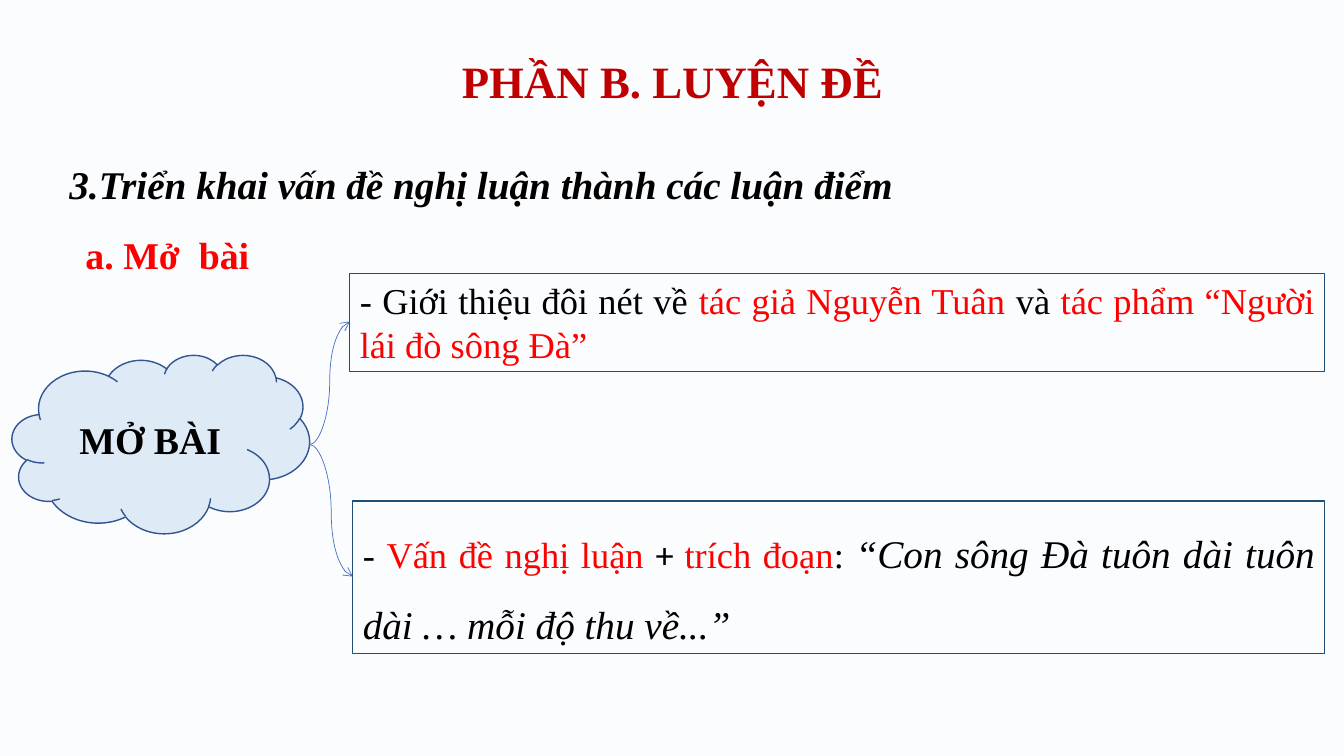
from dataclasses import dataclass

from lxml import etree
from pptx import Presentation
from pptx.dml.color import RGBColor
from pptx.enum.shapes import MSO_CONNECTOR, MSO_SHAPE
from pptx.enum.text import MSO_ANCHOR, MSO_AUTO_SIZE, PP_ALIGN
from pptx.oxml.ns import qn
from pptx.util import Inches, Pt

CURVE = MSO_CONNECTOR.CURVE
RECTANGLE, CLOUD = MSO_SHAPE.RECTANGLE, MSO_SHAPE.CLOUD
TOP, MIDDLE = MSO_ANCHOR.TOP, MSO_ANCHOR.MIDDLE
GROW, FIXED = MSO_AUTO_SIZE.SHAPE_TO_FIT_TEXT, MSO_AUTO_SIZE.NONE
CENTER, JUSTIFY = PP_ALIGN.CENTER, PP_ALIGN.JUSTIFY

PAPER = RGBColor(0xFB, 0xFC, 0xFE)
BLACK = RGBColor(0x00, 0x00, 0x00)
RED = RGBColor(0xFF, 0x00, 0x00)
DARK_RED = RGBColor(0xC0, 0x00, 0x00)
FRAME_BLUE = RGBColor(0x1F, 0x4E, 0x79)
CLOUD_FILL = RGBColor(0xDE, 0xEB, 0xF7)
CLOUD_EDGE = RGBColor(0x32, 0x54, 0x91)
ARROW_BLUE = RGBColor(0x44, 0x72, 0xC4)
SERIF, SANS = "Times New Roman", "Calibri"


@dataclass(frozen=True)
class Phrase:
    text: str
    size: float = 26
    color: RGBColor = BLACK
    bold: bool = False
    italic: bool = False
    font: str = SERIF


@dataclass(frozen=True)
class Block:
    box: tuple[float, float, float, float]
    phrases: tuple[Phrase, ...]
    align: PP_ALIGN = JUSTIFY
    spacing: float = 1.0
    anchor: MSO_ANCHOR = TOP
    auto_size: MSO_AUTO_SIZE = GROW
    wrap: bool = True
    outline: MSO_SHAPE | None = None
    edge: RGBColor = FRAME_BLUE
    edge_width: float = 0.75
    fill: RGBColor | None = None


@dataclass(frozen=True)
class Arrow:
    start: tuple[float, float]
    end: tuple[float, float]


BLOCKS = (
    Block((0.92, 0.4, 11.5, 0.86),
          (Phrase("PHẦN B. LUYỆN ĐỀ", 32, DARK_RED, bold=True),),
          CENTER, 0.9, MIDDLE, FIXED),
    Block((0.59, 1.31, 11.98, 0.72),
          (Phrase("3.Triển khai vấn đề nghị luận thành các luận điểm", 28,
                  bold=True, italic=True),),
          spacing=1.5),
    Block((3.5, 4.97, 9.64, 1.51),
          (Phrase("- "),
           Phrase("Vấn đề nghị luận ", color=RED),
           Phrase("+ ", font=SANS),
           Phrase("trích đoạn", color=RED),
           Phrase(": "),
           Phrase("“Con sông Đà tuôn dài tuôn dài … mỗi độ thu về...”", 28,
                  italic=True)),
          spacing=1.5, outline=RECTANGLE),
    Block((0.12, 3.52, 2.95, 1.77),
          (Phrase("MỞ BÀI", 27, bold=True),),
          CENTER, anchor=MIDDLE, auto_size=FIXED, outline=CLOUD,
          edge=CLOUD_EDGE, edge_width=1, fill=CLOUD_FILL),
    Block((3.47, 2.71, 9.67, 0.98),
          (Phrase("- Giới thiệu đôi nét về "),
           Phrase("tác giả Nguyễn Tuân ", color=RED),
           Phrase("và "),
           Phrase("tác phẩm “Người lái đò sông Đà”", color=RED)),
          outline=RECTANGLE),
    Block((0.74, 2.25, 1.84, 0.56),
          (Phrase("a. Mở  bài", 27, RED, bold=True),),
          CENTER, wrap=False),
)
CLOUD_TIP = (3.07, 4.41)
ARROWS = (Arrow(CLOUD_TIP, (3.47, 3.19)), Arrow(CLOUD_TIP, (3.5, 5.72)))


def draw_block(shapes, block: Block) -> None:
    box = [Inches(length) for length in block.box]
    if block.outline is None:
        holder = shapes.add_textbox(*box)
    else:
        holder = shapes.add_shape(block.outline, *box)
        holder.shadow.inherit = False
        holder.line.color.rgb = block.edge
        holder.line.width = Pt(block.edge_width)
        if block.fill is None:
            holder.fill.background()
        else:
            holder.fill.solid()
            holder.fill.fore_color.rgb = block.fill

    frame = holder.text_frame
    frame.word_wrap = block.wrap
    frame.auto_size = block.auto_size
    frame.vertical_anchor = block.anchor
    paragraph = frame.paragraphs[0]
    paragraph.alignment = block.align
    paragraph.line_spacing = block.spacing
    for phrase in block.phrases:
        run = paragraph.add_run()
        run.text = phrase.text
        run.font.name = phrase.font
        run.font.size = Pt(phrase.size)
        run.font.bold = phrase.bold
        run.font.italic = phrase.italic
        run.font.color.rgb = phrase.color


def draw_arrow(shapes, arrow: Arrow) -> None:
    ends = [Inches(length) for length in arrow.start + arrow.end]
    curve = shapes.add_connector(CURVE, *ends)
    curve.line.color.rgb = ARROW_BLUE
    curve.line.width = Pt(0.5)
    etree.SubElement(curve.line._get_or_add_ln(), qn("a:tailEnd"), type="arrow")
    etree.SubElement(curve._element.spPr, qn("a:effectLst"))


def main() -> None:
    deck = Presentation()
    deck.slide_width = Inches(13.33)
    deck.slide_height = Inches(7.5)
    slide = deck.slides.add_slide(deck.slide_layouts[6])
    slide.background.fill.solid()
    slide.background.fill.fore_color.rgb = PAPER
    for block in BLOCKS:
        draw_block(slide.shapes, block)
    for arrow in ARROWS:
        draw_arrow(slide.shapes, arrow)
    deck.save("out.pptx")


if __name__ == "__main__":
    main()
